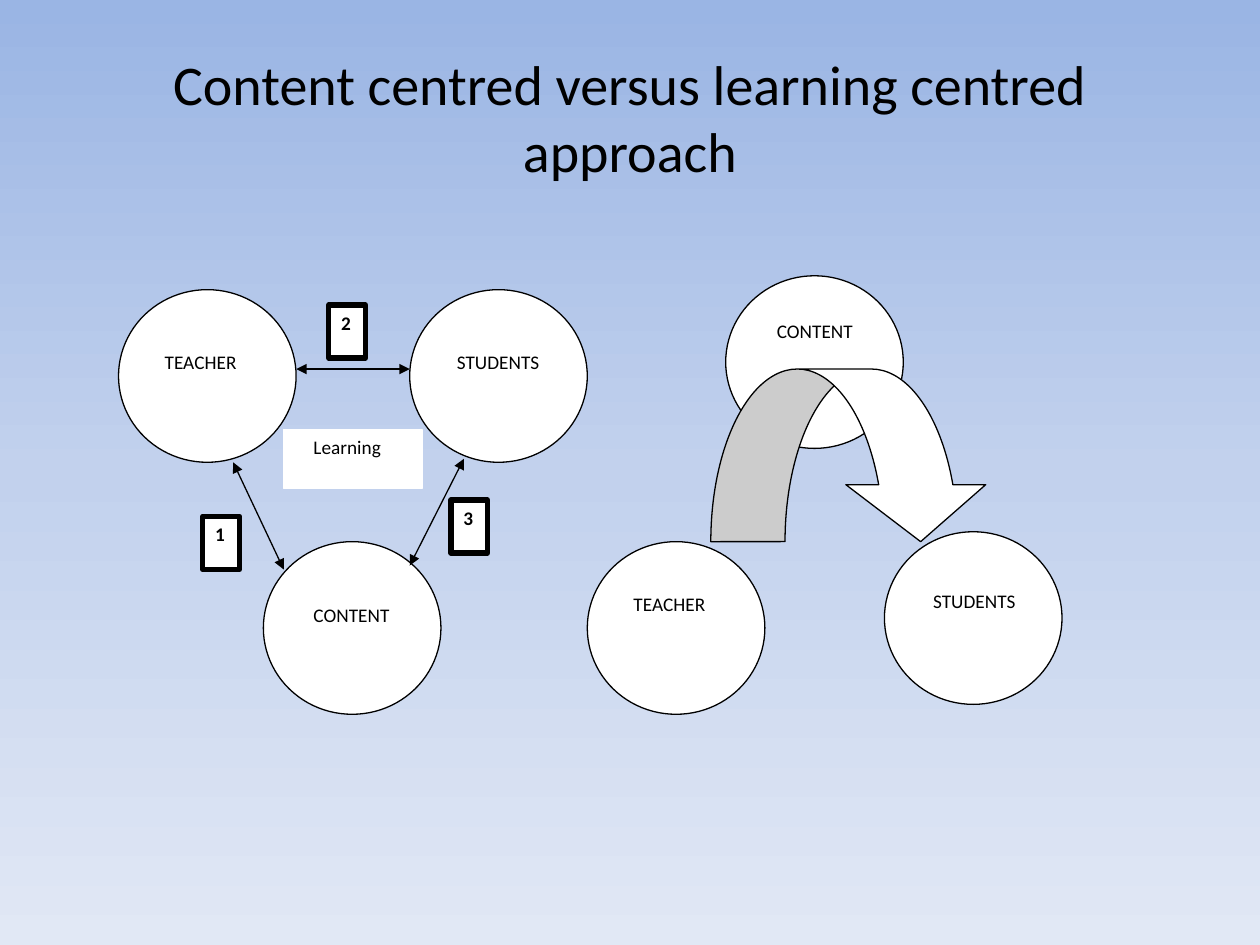
from copy import deepcopy

from lxml.etree import SubElement
from pptx import Presentation
from pptx.dml.color import RGBColor
from pptx.enum.shapes import MSO_CONNECTOR as Connector, MSO_SHAPE as Shape
from pptx.enum.text import MSO_ANCHOR as Anchor, PP_ALIGN as Align
from pptx.oxml.ns import qn
from pptx.util import Cm, Pt

COLORS = {"ink": "000000", "paper": "FFFFFF", "fold": "CCCCCC",
          "sky": "9AB5E4", "haze": "C2D1ED", "mist": "E1E8F5"}
FONT = "Calibri"
CIRCLE_SIZE = (3.58, 3.48)
LABEL_SIZE = (2.79, 1.19)
BADGE_SIZE = (0.74, 1.07)

TRIANGLE_CIRCLES = [(2.39, 5.84), (5.31, 10.92), (8.26, 5.84)]
TRIANGLE_ARROWS = [(5.97, 7.44, 8.26, 7.44), (9.35, 9.25, 8.26, 11.4),
                   (4.7, 9.32, 5.72, 11.48)]
TRIANGLE_LABELS = [("TEACHER", 2.72, 6.93), ("STUDENTS", 8.61, 6.93),
                   ("CONTENT", 5.72, 12.04), ("Learning", 5.72, 8.66)]
BADGES = [("1", 4.09, 10.41), ("2", 6.63, 6.15), ("3", 9.09, 10.08)]
TRANSFER_CIRCLES = [(11.84, 10.92), (14.63, 5.56), (17.83, 10.72)]
TRANSFER_LABELS = [("TEACHER", 12.17, 11.81), ("STUDENTS", 18.21, 11.76),
                   ("CONTENT", 15.06, 6.32)]


def color(name):
    """Return the named colour."""
    return RGBColor.from_string(COLORS[name])


def set_background(slide):
    """Fill the slide with a vertical three-stop gradient."""
    fill = slide.background.fill
    fill.gradient()
    fill.gradient_angle = 270
    stop_list = next(slide.element.iter(qn("a:gsLst")))
    stop_list.append(deepcopy(stop_list[0]))
    stops = zip(fill.gradient_stops, ("sky", "haze", "mist"), (0, 0.5, 1))
    for stop, name, position in stops:
        stop.color.rgb = color(name)
        stop.position = position


def add_run(paragraph, text, size, bold=False):
    """Add one formatted run to a paragraph."""
    run = paragraph.add_run()
    run.text = text
    run.font.name = FONT
    run.font.size = Pt(size)
    run.font.bold = bold
    run.font.color.rgb = color("ink")


def add_title(slide, text):
    """Place and fill the title placeholder."""
    title = slide.shapes.title
    title.left, title.top, title.width, title.height = (
        Cm(1.27), Cm(0.76), Cm(22.86), Cm(3.18))
    frame = title.text_frame
    frame.word_wrap = True
    frame.vertical_anchor = Anchor.MIDDLE
    paragraph = frame.paragraphs[0]
    paragraph.alignment = Align.CENTER
    add_run(paragraph, text, 32)


def add_figure(slide, kind, position, size, line="ink", weight=0.75):
    """Add a white preset shape with a plain outline."""
    shape = slide.shapes.add_shape(kind, *map(Cm, position + size))
    shape.shadow.inherit = False
    shape.fill.solid()
    shape.fill.fore_color.rgb = color("paper")
    shape.line.color.rgb = color(line)
    shape.line.width = Pt(weight)
    return shape


def add_circles(slide, positions):
    """Add equal circles at the given positions."""
    for position in positions:
        add_figure(slide, Shape.OVAL, position, CIRCLE_SIZE)


def add_text(shape, text, inset, bold=False):
    """Write top-left text in a shape."""
    frame = shape.text_frame
    frame.word_wrap = True
    frame.vertical_anchor = Anchor.TOP
    frame.margin_left = Cm(inset)
    paragraph = frame.paragraphs[0]
    paragraph.alignment = Align.LEFT
    paragraph.space_after = Pt(10)
    add_run(paragraph, text, 11, bold)


def add_labels(slide, labels):
    """Add white text boxes naming the parts."""
    for text, left, top in labels:
        label = add_figure(slide, Shape.RECTANGLE, (left, top), LABEL_SIZE, "paper")
        add_text(label, text, 0.6)


def add_badges(slide, badges):
    """Add numbered boxes with a heavy outline."""
    for text, left, top in badges:
        badge = add_figure(slide, Shape.RECTANGLE, (left, top), BADGE_SIZE, weight=3)
        add_text(badge, text, 0.25, bold=True)


def add_double_arrow(slide, ends):
    """Add a line with an arrowhead at both ends."""
    arrow = slide.shapes.add_connector(Connector.STRAIGHT, *map(Cm, ends))
    arrow.line.color.rgb = color("ink")
    arrow.line.width = Pt(0.75)
    outline = arrow.line._get_or_add_ln()
    for end in ("a:headEnd", "a:tailEnd"):
        SubElement(outline, qn(end), type="triangle")
    SubElement(arrow._element.spPr, qn("a:effectLst"))


def add_curved_arrow(slide):
    """Add the arrow leading from teacher to students."""
    arrow = add_figure(slide, Shape.CURVED_DOWN_ARROW, (14.33, 7.44), (5.64, 3.48))
    for index, value in enumerate((0.43, 0.86, 0.33)):
        arrow.adjustments[index] = value


def main():
    """Build and save the slide."""
    presentation = Presentation()
    presentation.slide_width, presentation.slide_height = Cm(25.4), Cm(19.05)
    slide = presentation.slides.add_slide(presentation.slide_layouts[5])
    set_background(slide)
    add_title(slide, "Content centred versus learning centred approach")
    add_circles(slide, TRIANGLE_CIRCLES)
    for ends in TRIANGLE_ARROWS:
        add_double_arrow(slide, ends)
    add_labels(slide, TRIANGLE_LABELS)
    add_badges(slide, BADGES)
    add_circles(slide, TRANSFER_CIRCLES)
    add_labels(slide, TRANSFER_LABELS)
    add_curved_arrow(slide)
    presentation.save("out.pptx")


if __name__ == "__main__":
    main()
